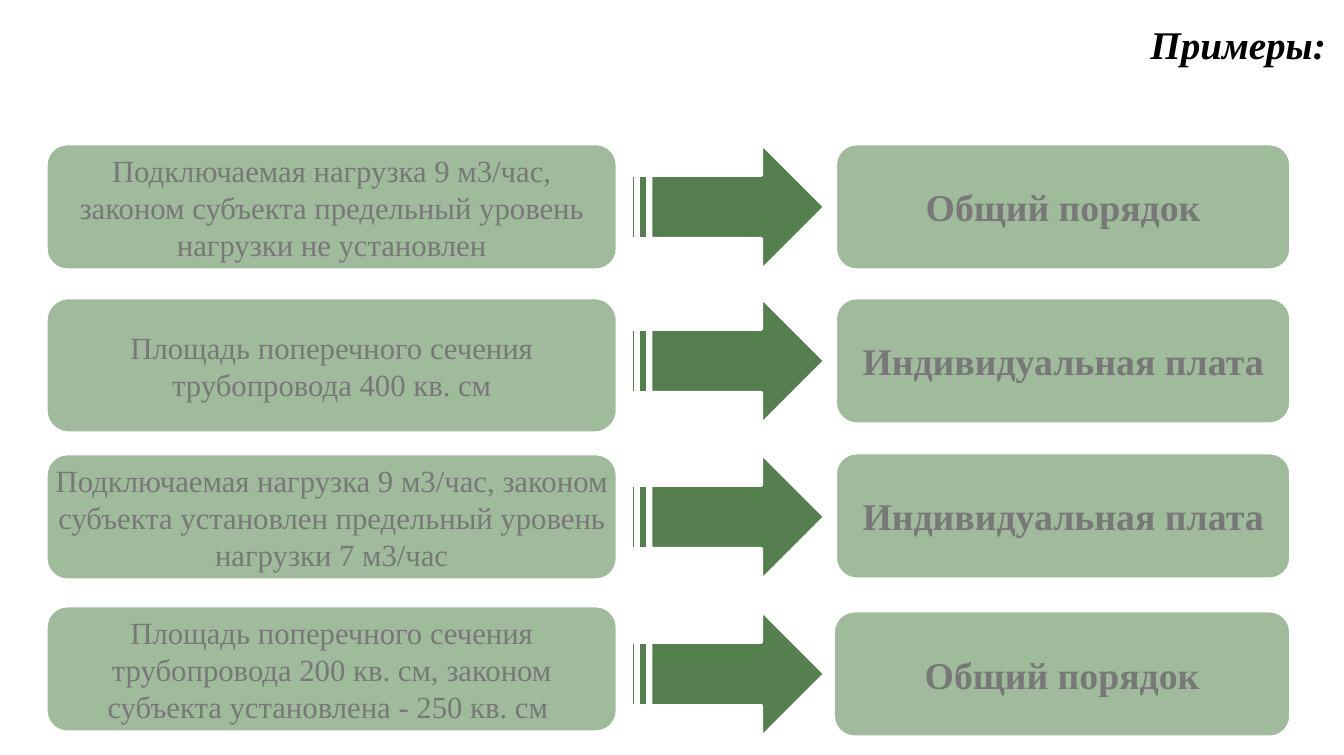
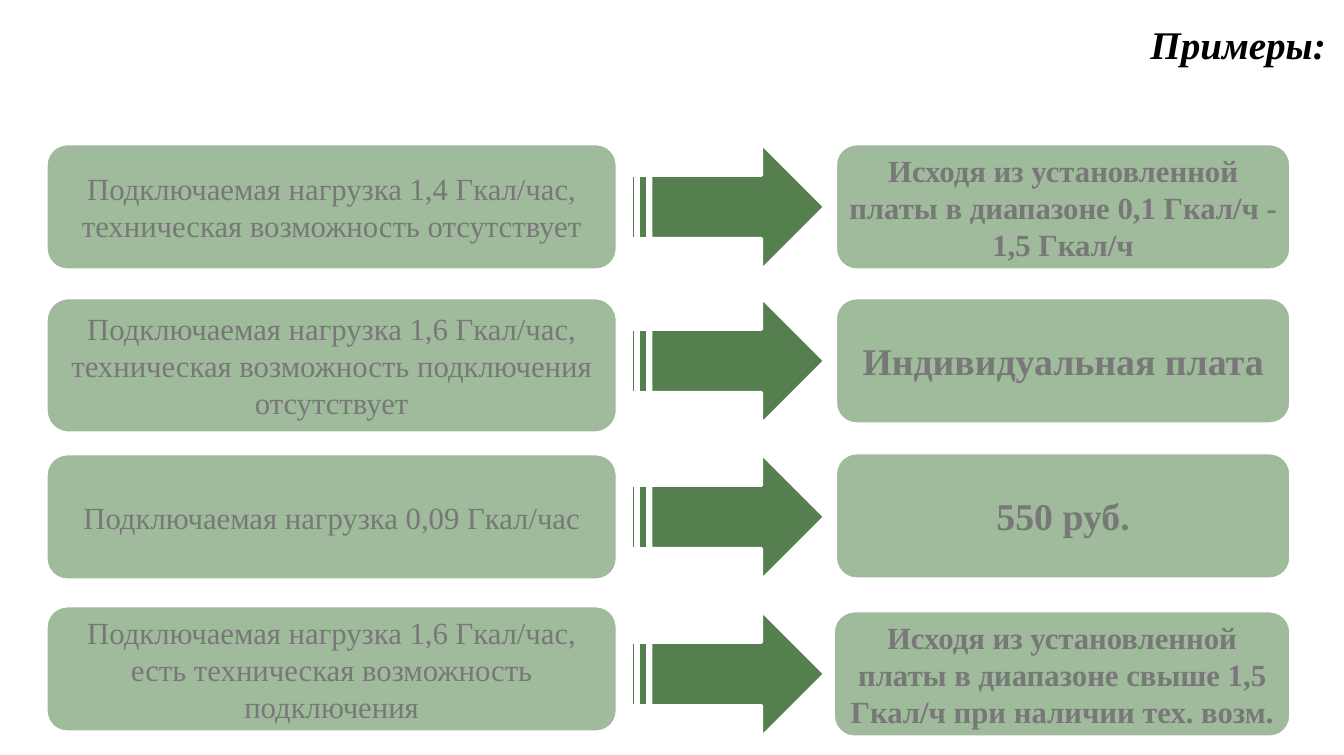
"""Build two slides of connection-fee examples, each pairing a case with its outcome."""
import dataclasses

import lxml.etree
import pptx
import pptx.dml.color
import pptx.enum.shapes
import pptx.enum.text
import pptx.oxml.ns
import pptx.util

Inches = pptx.util.Inches
Pt = pptx.util.Pt
RGB = pptx.dml.color.RGBColor.from_string
SHAPE = pptx.enum.shapes.MSO_SHAPE
ALIGN = pptx.enum.text.PP_ALIGN
ANCHOR = pptx.enum.text.MSO_ANCHOR
qn = pptx.oxml.ns.qn


@dataclasses.dataclass(frozen=True)
class Theme:
    font: str = "Times New Roman"
    title: str = "000000"
    text: str = "787878"
    box: str = "115606"
    arrow: str = "0E4905"
    outline: str = "FFFFFF"
    box_alpha: int = 40
    arrow_alpha: int = 70
    outline_pt: float = 2
    title_pt: float = 28
    text_pt: float = 22
    result_pt: float = 27


def put_text(tf, text, *, font, size, color, bold=False, italic=False,
             align=ALIGN.CENTER, anchor=ANCHOR.MIDDLE, inset=0.05):
    tf.word_wrap = True
    tf.vertical_anchor = anchor
    tf.margin_left = tf.margin_right = tf.margin_top = tf.margin_bottom = Inches(inset)
    p = tf.paragraphs[0]
    p.alignment = align
    r = p.add_run()
    r.text = text
    r.font.name = font
    r.font.size = Pt(size)
    r.font.color.rgb = RGB(color)
    r.font.bold = bold
    r.font.italic = italic


class Deck:
    def __init__(self, theme):
        self.theme = theme
        self.prs = pptx.Presentation()
        self.prs.slide_width = Inches(13.35)
        self.prs.slide_height = Inches(7.5)
        self.s = None

    def slide(self, title):
        t = self.theme
        self.s = self.prs.slides.add_slide(self.prs.slide_layouts[6])
        sp = self.s.shapes.add_textbox(Inches(2.5), Inches(0.15), Inches(10.72), Inches(0.53))
        put_text(sp.text_frame, title, font=t.font, size=t.title_pt, color=t.title,
                 bold=True, italic=True, align=ALIGN.RIGHT, anchor=ANCHOR.TOP)

    def shape(self, kind, at, color, alpha):
        sp = self.s.shapes.add_shape(kind, *map(Inches, at))
        sp.shadow.inherit = False
        sp.fill.solid()
        sp.fill.fore_color.rgb = RGB(color)
        clr = sp._element.spPr.find(f"{qn('a:solidFill')}/{qn('a:srgbClr')}")
        lxml.etree.SubElement(clr, qn("a:alpha"), val=str(alpha * 1000))
        sp.line.color.rgb = RGB(self.theme.outline)
        sp.line.width = Pt(self.theme.outline_pt)
        return sp

    def box(self, at, text, **style):
        t = self.theme
        sp = self.shape(SHAPE.ROUNDED_RECTANGLE, at, t.box, t.box_alpha)
        put_text(sp.text_frame, text, font=t.font, color=t.text, **style)

    def arrow(self, at):
        self.shape(SHAPE.STRIPED_RIGHT_ARROW, at, self.theme.arrow, self.theme.arrow_alpha)


CASE_BOXES = [
    ((0.46, 1.43, 5.67, 1.25), 0.05),
    ((0.46, 2.96, 5.67, 1.34), 0.01),
    ((0.46, 4.51, 5.67, 1.25), 0.01),
    ((0.46, 6.02, 5.67, 1.25), 0.05),
]
ARROW_TOPS = [1.43, 2.96, 4.51, 6.07]
RESULT_BOXES = [
    (8.3, 1.43, 4.52, 1.25),
    (8.3, 2.96, 4.52, 1.25),
    (8.3, 4.5, 4.52, 1.25),
    (8.28, 6.07, 4.54, 1.25),
]
LONG_RESULT = 30

EXAMPLES = [
    [
        ("Подключаемая нагрузка 9 м3/час, законом субъекта предельный уровень нагрузки не установлен",
         "Общий порядок"),
        ("Площадь поперечного сечения трубопровода 400 кв. см",
         "Индивидуальная плата"),
        ("Подключаемая нагрузка 9 м3/час, законом субъекта установлен предельный уровень нагрузки 7 м3/час",
         "Индивидуальная плата"),
        ("Площадь поперечного сечения трубопровода 200 кв. см, законом субъекта установлена - 250 кв. см ",
         "Общий порядок"),
    ],
    [
        ("Подключаемая нагрузка 1,4 Гкал/час, техническая возможность отсутствует",
         "Исходя из установленной платы в диапазоне 0,1 Гкал/ч - 1,5 Гкал/ч"),
        ("Подключаемая нагрузка 1,6 Гкал/час, техническая возможность подключения отсутствует",
         "Индивидуальная плата"),
        ("Подключаемая нагрузка 0,09 Гкал/час",
         "550 руб."),
        ("Подключаемая нагрузка 1,6 Гкал/час, есть техническая возможность подключения",
         "Исходя из установленной платы в диапазоне свыше 1,5 Гкал/ч при наличии тех. возм."),
    ],
]


def main():
    theme = Theme()
    deck = Deck(theme)
    for rows in EXAMPLES:
        deck.slide("Примеры:")
        for (case, result), (case_at, inset), top, result_at in zip(
                rows, CASE_BOXES, ARROW_TOPS, RESULT_BOXES):
            deck.box(case_at, case, size=theme.text_pt, inset=inset)
            deck.arrow((6.27, top, 1.92, 1.25))
            is_long = len(result) > LONG_RESULT
            deck.box(result_at, result, bold=True,
                     size=theme.text_pt if is_long else theme.result_pt,
                     inset=0.01 if is_long else 0.05)
    deck.prs.save("out.pptx")


if __name__ == "__main__":
    main()
